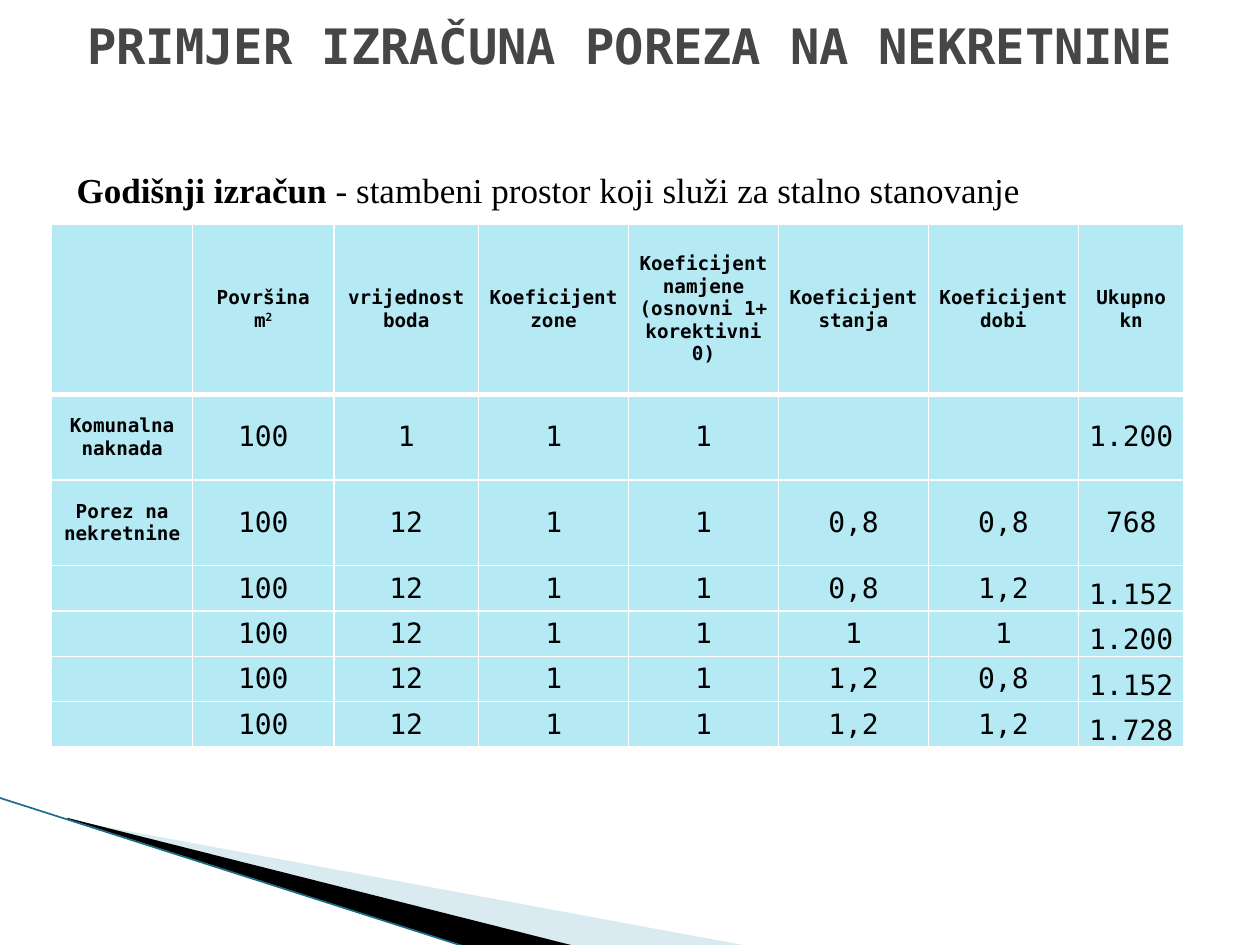
from dataclasses import dataclass

from lxml import etree
from pptx import Presentation
from pptx import util as u
from pptx.dml.color import RGBColor
from pptx.enum import shapes, text
from pptx.oxml.ns import qn


@dataclass(frozen=True)
class Theme:
    mono: str = "DejaVu Sans Mono"
    serif: str = "Times New Roman"
    heading: str = "464646"
    ink: str = "000000"
    cell: str = "B5E9F4"
    border: str = "FFFFFF"
    wedge: str = "A0CBDC"
    edge: str = "1A6F85"
    title_size: float = 27.9
    lead_size: float = 20
    label_size: float = 11
    number_size: float = 16


THEME = Theme()
COLUMNS = [1.12, 1.12, 1.15, 1.19, 1.19, 1.19, 1.19, 0.84]
ROWS = [1.35, 0.68, 0.68, 0.36, 0.36, 0.36, 0.36]
HEADERS = ["", "Površina\nm2", "vrijednost boda", "Koeficijent zone",
           "Koeficijent namjene (osnovni 1+ korektivni 0)",
           "Koeficijent stanja", "Koeficijent dobi", "Ukupno\nkn"]
RECORDS = [
    ["Komunalna naknada", "100", "1", "1", "1", "", "", "1.200"],
    ["Porez na nekretnine", "100", "12", "1", "1", "0,8", "0,8", "768"],
    ["", "100", "12", "1", "1", "0,8", "1,2", "1.152"],
    ["", "100", "12", "1", "1", "1", "1", "1.200"],
    ["", "100", "12", "1", "1", "1,2", "0,8", "1.152"],
    ["", "100", "12", "1", "1", "1,2", "1,2", "1.728"],
]


def style_font(font, name, size, color, bold):
    font.name, font.size, font.bold = name, u.Pt(size), bold
    font.color.rgb = RGBColor.from_string(color)


def place(shape, box):
    shape.left, shape.top, shape.width, shape.height = map(u.Inches, box)


def add_wedge(page, points, color, opacity=100):
    corners = [(u.Inches(x), u.Inches(y)) for x, y in points]
    builder = page.shapes.build_freeform(*corners[0], scale=1.0)
    builder.add_line_segments(corners[1:], close=True)
    wedge = builder.convert_to_shape()
    wedge.shadow.inherit = False
    wedge.line.fill.background()
    wedge.fill.solid()
    wedge.fill.fore_color.rgb = RGBColor.from_string(color)
    if opacity < 100:
        tint = wedge.fill._xPr.find(f".//{qn('a:srgbClr')}")
        etree.SubElement(tint, qn("a:alpha"), val=str(opacity * 1000))


def add_corner(page, left, top):
    """Draw the sweeping wedges, measured from where the edge line starts."""
    def shift(points):
        return [(left + x, top + y) for x, y in points]

    add_wedge(page, shift([(0.56, 0.18), (5.96, 1.18), (4.57, 1.18), (0.56, 0.17)]),
              THEME.wedge, 40)
    add_wedge(page, shift([(0.54, 0.16), (4.58, 1.18), (3.73, 1.19), (0.55, 0.17)]),
              THEME.ink)
    edge = page.shapes.add_connector(
        shapes.MSO_CONNECTOR.STRAIGHT, u.Inches(left), u.Inches(top),
        u.Inches(left + 3.72), u.Inches(top + 1.19))
    edge.line.width = u.Pt(0.95)
    edge.line.color.rgb = RGBColor.from_string(THEME.edge)
    etree.SubElement(edge._element.spPr, qn("a:effectLst"))


def add_title(page, box):
    title = page.shapes.title
    place(title, box)
    frame = title.text_frame
    frame.text = "PRIMJER IZRAČUNA POREZA NA NEKRETNINE"
    frame.auto_size = text.MSO_AUTO_SIZE.NONE
    frame.vertical_anchor = text.MSO_ANCHOR.MIDDLE
    frame.margin_top, frame.margin_bottom = 0, u.Inches(0.1)
    para = frame.paragraphs[0]
    para.alignment = text.PP_ALIGN.CENTER
    style_font(para.runs[0].font, THEME.mono, THEME.title_size, THEME.heading, True)


def add_lead(page, box):
    frame = page.shapes.add_textbox(*map(u.Inches, box)).text_frame
    frame.word_wrap = True
    para = frame.paragraphs[0]
    for words, bold in [("Godišnji izračun ", True),
                        ("- stambeni prostor koji služi za stalno stanovanje", False)]:
        span = para.add_run()
        span.text = words
        style_font(span.font, THEME.serif, THEME.lead_size, THEME.ink, bold)


def add_borders(cell, bottom_width):
    for side, width in [("L", 1), ("R", 1), ("T", 1), ("B", bottom_width)]:
        line = etree.SubElement(cell._tc.get_or_add_tcPr(), qn(f"a:ln{side}"),
                                w=str(u.Pt(width)))
        fill = etree.SubElement(line, qn("a:solidFill"))
        etree.SubElement(fill, qn("a:srgbClr"), val=THEME.border)


def fill_cell(cell, words, is_label, inset, anchor, bottom_width):
    add_borders(cell, bottom_width)
    cell.fill.solid()
    cell.fill.fore_color.rgb = RGBColor.from_string(THEME.cell)
    cell.margin_left = cell.margin_right = u.Inches(inset)
    cell.margin_top = cell.margin_bottom = 0
    cell.vertical_anchor = anchor
    cell.text_frame.text = words
    size = THEME.label_size if is_label else THEME.number_size
    for para in cell.text_frame.paragraphs:
        para.alignment = text.PP_ALIGN.CENTER
        if para.text == "m2":
            para.text = "m"
            para.add_run().text = "2"
            para.runs[1].font._element.set("baseline", "30000")
        for span in para.runs:
            style_font(span.font, THEME.mono, size, THEME.ink, is_label)


def add_tax_table(page, box):
    table = page.shapes.add_table(len(ROWS), len(COLUMNS), *map(u.Inches, box)).table
    table.first_row = table.horz_banding = False
    for column, width in zip(table.columns, COLUMNS):
        column.width = u.Inches(width)
    for row, height in zip(table.rows, ROWS):
        row.height = u.Inches(height)
    last = len(COLUMNS) - 1
    for r, record in enumerate([HEADERS] + RECORDS):
        for c, words in enumerate(record):
            is_label = r == 0 or c == 0
            is_low = r > 2 and c == last
            fill_cell(table.cell(r, c), words, is_label,
                      inset=0.07 if is_label or r == 1 else 0.01,
                      anchor=text.MSO_ANCHOR.BOTTOM if is_low else text.MSO_ANCHOR.MIDDLE,
                      bottom_width=3 if r == 0 else 1)
            if r == 1:  # the same heavy rule seen from the row below
                table.cell(r, c)._tc.tcPr.find(qn("a:lnT")).set("w", str(u.Pt(3)))


def main():
    deck = Presentation()
    deck.slide_width, deck.slide_height = u.Inches(10), u.Inches(7.5)
    page = deck.slides.add_slide(deck.slide_layouts.get_by_name("Title Only"))
    add_corner(page, -0.01, 6.33)
    add_tax_table(page, (0.41, 1.78, 9, 4.13))
    add_lead(page, (0.51, 1.29, 8.9, 0.44))
    add_title(page, (0.5, 0.13, 9, 0.55))
    deck.save("out.pptx")


if __name__ == "__main__":
    main()
